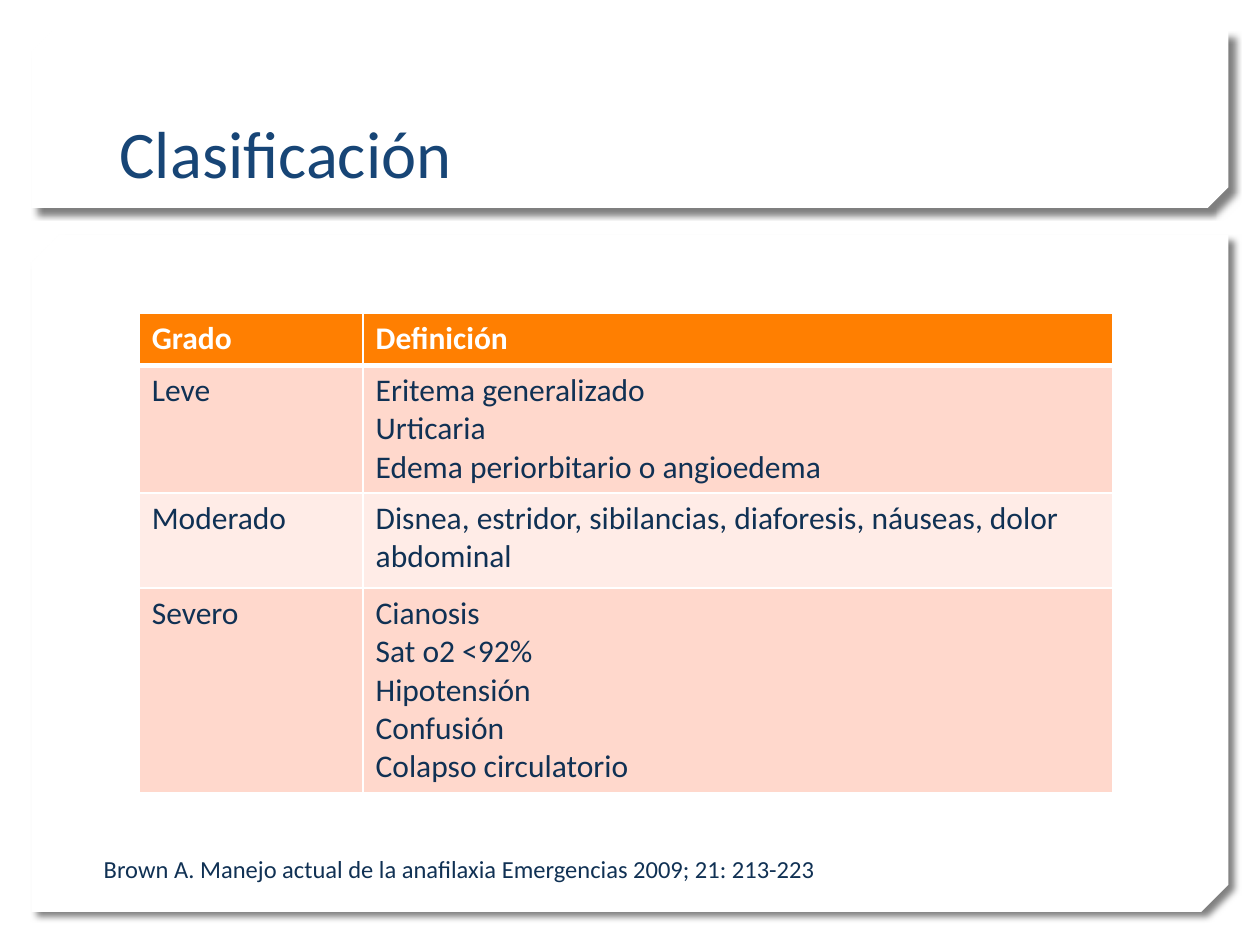
import dataclasses

import lxml.etree
import pptx
import pptx.dml.color
import pptx.enum.shapes
import pptx.enum.text
import pptx.oxml
import pptx.oxml.ns
import pptx.util


@dataclasses.dataclass(frozen=True)
class Theme:
    font: str = "Calibri"
    title: str = "174576"
    text: str = "103154"
    white: str = "FFFFFF"
    header: str = "FF7F01"
    bands: tuple = ("FFD8CC", "FFECE7")
    title_size: int = 38
    table_size: int = 18
    source_size: int = 14


@dataclasses.dataclass(frozen=True)
class Box:
    left: float
    top: float
    width: float
    height: float

    def inset(self, left, top, width, height):
        return Box(self.left + left * self.width, self.top + top * self.height,
                   width * self.width, height * self.height)

    def emu(self):
        return [pptx.util.Inches(length) for length in dataclasses.astuple(self)]


THEME = Theme()
PAGE = Box(0, 0, 10, 7.5)
GRADES = [
    ("Grado", ["Definición"]),
    ("Leve", ["Eritema generalizado", "Urticaria", "Edema periorbitario o angioedema"]),
    ("Moderado", ["Disnea, estridor, sibilancias, diaforesis, náuseas, dolor abdominal"]),
    ("Severo", ["Cianosis", "Sat o2 <92%", "Hipotensión", "Confusión", "Colapso circulatorio"]),
]
COLUMN_SHARES = (0.23, 0.77)
ROW_SHARES = (0.11, 0.26, 0.2, 0.43)


def rgb(color):
    return pptx.dml.color.RGBColor.from_string(color)


def write(frame, lines, size, color, bold=False):
    frame.word_wrap = True
    for index, line in enumerate(lines):
        paragraph = frame.add_paragraph() if index else frame.paragraphs[0]
        paragraph.alignment = pptx.enum.text.PP_ALIGN.LEFT
        run = paragraph.add_run()
        run.text = line
        run.font.name = THEME.font
        run.font.size = pptx.util.Pt(size)
        run.font.bold = bold
        run.font.color.rgb = rgb(color)


def add_panel(slide, box, snip):
    panel = slide.shapes.add_shape(
        pptx.enum.shapes.MSO_SHAPE.SNIP_2_DIAG_RECTANGLE, *box.emu())
    panel.adjustments[0] = 0
    panel.adjustments[1] = snip
    panel.fill.solid()
    panel.fill.fore_color.rgb = rgb(THEME.white)
    panel.line.fill.background()
    panel.shadow.inherit = False
    properties = panel._element.spPr
    properties.find(pptx.oxml.ns.qn("a:xfrm")).set("flipV", "1")
    effects = properties.find(pptx.oxml.ns.qn("a:effectLst"))
    effects.append(pptx.oxml.parse_xml(
        f'<a:outerShdw {pptx.oxml.ns.nsdecls("a")} blurRad="{pptx.util.Pt(4)}" '
        f'dist="{pptx.util.Pt(5)}" dir="2700000" algn="tl" rotWithShape="0">'
        '<a:srgbClr val="000000"><a:alpha val="50000"/></a:srgbClr></a:outerShdw>'))


def add_heading(slide, box):
    add_panel(slide, box, 0.117)
    title = slide.shapes.title
    slide.shapes._spTree.append(title._element)
    title.left, title.top, title.width, title.height = box.inset(0.063, 0.05, 0.873, 0.893).emu()
    title.text_frame.auto_size = pptx.enum.text.MSO_AUTO_SIZE.NONE
    title.text_frame.vertical_anchor = pptx.enum.text.MSO_ANCHOR.BOTTOM
    write(title.text_frame, ["Clasificación"], THEME.title_size, THEME.title)


def add_borders(cell, bottom, top):
    properties = cell._tc.get_or_add_tcPr()
    for side, width in (("L", 1), ("R", 1), ("T", top), ("B", bottom)):
        border = lxml.etree.SubElement(
            properties, pptx.oxml.ns.qn(f"a:ln{side}"), w=str(pptx.util.Pt(width)))
        fill = lxml.etree.SubElement(border, pptx.oxml.ns.qn("a:solidFill"))
        lxml.etree.SubElement(fill, pptx.oxml.ns.qn("a:srgbClr"), val=THEME.white)


def add_grades(slide, box):
    grades = slide.shapes.add_table(len(GRADES), len(COLUMN_SHARES), *box.emu()).table
    for column, share in zip(grades.columns, COLUMN_SHARES):
        column.width = pptx.util.Inches(box.width * share)
    for row, share in zip(grades.rows, ROW_SHARES):
        row.height = pptx.util.Inches(box.height * share)
    for index, (grade, definition) in enumerate(GRADES):
        is_header = index == 0
        for column, lines in enumerate(([grade], definition)):
            cell = grades.cell(index, column)
            add_borders(cell, bottom=3 if is_header else 1, top=3 if index == 1 else 1)
            cell.fill.solid()
            cell.fill.fore_color.rgb = rgb(
                THEME.header if is_header else THEME.bands[(index - 1) % 2])
            write(cell.text_frame, lines, THEME.table_size,
                  THEME.white if is_header else THEME.text, bold=is_header)


def add_source(slide, box):
    source = slide.shapes.add_textbox(*box.emu())
    write(source.text_frame,
          ["Brown A. Manejo actual de la anafilaxia Emergencias 2009; 21: 213-223"],
          THEME.source_size, THEME.text)
    source.text_frame.auto_size = pptx.enum.text.MSO_AUTO_SIZE.SHAPE_TO_FIT_TEXT


def add_body(slide, box):
    add_panel(slide, box, 0.04)
    add_grades(slide, box.inset(0.09, 0.115, 0.813, 0.7))
    add_source(slide, box.inset(0.05, 0.905, 0.905, 0.063))


def main():
    deck = pptx.Presentation()
    deck.slide_width = pptx.util.Inches(PAGE.width)
    deck.slide_height = pptx.util.Inches(PAGE.height)
    slide = deck.slides.add_slide(deck.slide_layouts.get_by_name("Title Only"))
    slide.background.fill.solid()
    slide.background.fill.fore_color.rgb = rgb(THEME.white)
    add_heading(slide, PAGE.inset(0.025, 0.033, 0.95, 0.187))
    add_body(slide, PAGE.inset(0.025, 0.249, 0.95, 0.716))
    deck.save("out.pptx")


if __name__ == "__main__":
    main()
